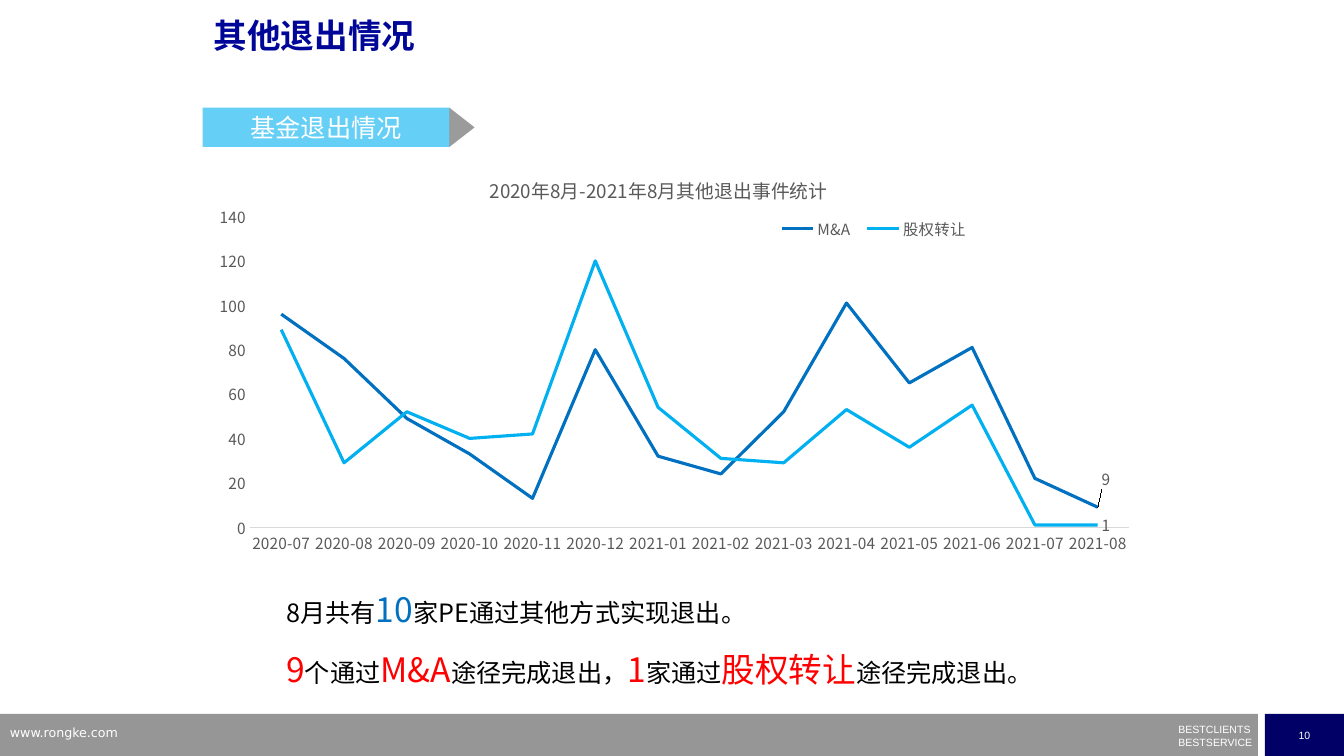
from lxml import etree
from pptx import Presentation
from pptx import util as u
from pptx.chart.data import CategoryChartData
from pptx.dml.color import RGBColor
from pptx.enum import chart as ch, shapes, text
from pptx.oxml import parse_xml
from pptx.oxml.ns import nsdecls, qn

Pt = u.Pt
HUE = {"navy": "000066", "title": "000798", "blue": "0070C0", "sky": "00B0F0",
       "red": "FF0000", "black": "000000", "white": "FFFFFF", "grey": "969696",
       "dark": "595959", "pale": "D9D9D9"}
SANS = "Noto Sans CJK SC"
LEFT = text.PP_ALIGN.LEFT
MID = text.PP_ALIGN.CENTER

MONTHS = [f"2020-{m:02}" for m in range(7, 13)] + [f"2021-{m:02}" for m in range(1, 9)]
DEALS = {
    "M&A": ("blue", [96, 76, 49, 33, 13, 80, 32, 24, 52, 101, 65, 81, 22, 9]),
    "股权转让": ("sky", [89, 29, 52, 40, 42, 120, 54, 31, 29, 53, 36, 55, 1, 1]),
}


def rgb(hue):
    return RGBColor.from_string(HUE[hue])


def layout(**spots):
    """Build a manual chart layout from settings such as x, y, w, h."""
    tags = "".join(f'<c:{k} val="{v}"/>' for k, v in spots.items())
    return parse_xml(f'<c:layout {nsdecls("c")}><c:manualLayout>{tags}'
                     '</c:manualLayout></c:layout>')


def place(part, after, **spots):
    """Swap in a manual layout right after the named child, or first."""
    for old in part.findall(qn("c:layout")):
        part.remove(old)
    new = layout(**spots)
    if after:
        part.find(qn(after)).addnext(new)
    else:
        part.insert(0, new)


class Deck:
    def __init__(self):
        self.prs = Presentation()
        self.prs.slide_width, self.prs.slide_height = Pt(960), Pt(540)
        self.slide = self.prs.slides.add_slide(self.prs.slide_layouts[5])

    def font(self, font, size, hue, name=SANS, bold=False):
        font.size, font.bold, font.name = Pt(size), bold, name
        font.color.rgb = rgb(hue)
        east = etree.SubElement(font._rPr, qn("a:ea"))
        east.set("typeface", SANS)

    def fill(self, frame, lines, size, hue, name=SANS, align=LEFT, gap=None,
             bold=False):
        """Put in lines; a line is a string or a list of (words, size, hue)."""
        for i, line in enumerate(lines):
            para = frame.paragraphs[0] if i == 0 else frame.add_paragraph()
            para.alignment, para.line_spacing = align, gap
            if isinstance(line, str):
                para.text = line
                self.font(para.font, size, hue, name, bold)
                continue
            for words, big, tint in line:
                run = para.add_run()
                run.text = words
                self.font(run.font, big, tint, name)

    def title(self, words, box):
        head = self.slide.shapes.title
        head.left, head.top, head.width, head.height = map(Pt, box)
        frame = head.text_frame
        frame.auto_size = text.MSO_AUTO_SIZE.NONE
        frame.vertical_anchor = text.MSO_ANCHOR.TOP
        self.fill(frame, [words], 24, "title", "Arial", gap=0.9, bold=True)

    def shape(self, kind, box, hue, alpha=None, home=None):
        item = (home or self.slide).shapes.add_shape(kind, *map(Pt, box))
        item.shadow.inherit = False
        item.fill.solid()
        item.fill.fore_color.rgb = rgb(hue)
        item.line.fill.background()
        if alpha:
            tint = item.fill._xPr.find(qn("a:solidFill"))[0]
            etree.SubElement(tint, qn("a:alpha")).set("val", str(alpha * 1000))
        item.text_frame.vertical_anchor = text.MSO_ANCHOR.MIDDLE
        return item

    def note(self, lines, box, size, hue, inset=True, **style):
        frame = self.slide.shapes.add_textbox(*map(Pt, box)).text_frame
        frame.word_wrap = True
        if not inset:
            frame.margin_left = frame.margin_right = 0
            frame.margin_top = frame.margin_bottom = 0
        self.fill(frame, lines, size, hue, **style)
        return frame

    def chart(self, name, box):
        data = CategoryChartData()
        data.categories = MONTHS
        for label, (hue, vals) in DEALS.items():
            data.add_series(label, vals)
        chart = self.slide.shapes.add_chart(
            ch.XL_CHART_TYPE.LINE, *map(Pt, box), data).chart
        self.font(chart.font, 11, "dark")
        head = chart.chart_title
        self.fill(head.text_frame, [name], 13.4, "dark", align=MID)
        place(head._element, "c:tx", xMode="edge", yMode="edge", x=0.3, y=0.05)
        area = chart._chartSpace.chart.plotArea
        place(area, None, layoutTarget="inner", xMode="edge", yMode="edge",
              x=0.05, y=0.16, w=0.93, h=0.75)
        self.axes(chart)
        chart.has_legend = True
        key = chart.legend
        key.position = ch.XL_LEGEND_POSITION.BOTTOM
        key.include_in_layout = False
        self.font(key.font, 11, "dark")
        place(key._element, "c:legendPos", xMode="edge", yMode="edge",
              x=0.6, y=0.16, w=0.22, h=0.06)
        for line in chart.plots[0].series:
            self.line(line, DEALS[line.name][0])
        last = chart.plots[0].series[0]._element.find(".//" + qn("c:dLbl"))
        place(last, "c:idx", x=0, y=-0.07)

    def axes(self, chart):
        cat, val = chart.category_axis, chart.value_axis
        for axis in (cat, val):
            axis.has_major_gridlines = False
            axis.major_tick_mark = axis.minor_tick_mark = ch.XL_TICK_MARK.NONE
            self.font(axis.tick_labels.font, 11, "dark")
        cat.format.line.color.rgb = rgb("pale")
        cat.format.line.width = Pt(0.75)
        val.format.line.fill.background()
        val.minimum_scale, val.maximum_scale, val.major_unit = 0, 140, 20

    def line(self, line, hue):
        line.smooth = False
        line.format.line.color.rgb = rgb(hue)
        line.format.line.width = Pt(2.25)
        line.marker.style = ch.XL_MARKER_STYLE.NONE
        line.data_labels.show_value = False
        label = line.points[len(MONTHS) - 1].data_label
        self.font(label.font, 11, "dark")
        label.position = ch.XL_LABEL_POSITION.RIGHT

    def banner(self, words):
        group = self.slide.shapes.add_group_shape()
        bar = self.shape(shapes.MSO_SHAPE.RECTANGLE, (144.7, 77, 176.5, 28),
                         "sky", 60, group)
        self.fill(bar.text_frame, [words], 18, "white", align=MID)
        tip = self.shape(shapes.MSO_SHAPE.ISOSCELES_TRIANGLE, (316, 82, 28, 18),
                         "dark", 60, group)
        tip.rotation = 90

    def footer(self):
        rect = shapes.MSO_SHAPE.RECTANGLE
        self.shape(rect, (0, 510, 898.5, 30), "grey")
        page = self.shape(rect, (903.5, 510, 56.5, 30), "navy").text_frame
        page.word_wrap = False
        self.fill(page, ["10"], 7.5, "white", "Arial", MID)
        motto = self.note(["BESTCLIENTS", "BESTSERVICE"], (841.7, 520.5, 55, 14.4),
                          7.5, "white", False, name="Arial", gap=0.5)
        motto.paragraphs[1].space_before = Pt(4.3)
        self.note(["www.rongke.com"], (0, 514, 230, 19), 9, "white",
                  name="DejaVu Sans")


def main():
    deck = Deck()
    deck.footer()
    deck.title("其他退出情况", (145.5, 10, 648, 50.4))
    deck.note([
        [("8月共有", 18, "black"), ("10", 24, "blue"),
         ("家PE通过其他方式实现退出。", 18, "black")],
        [("9", 24, "red"), ("个通过", 18, "black"), ("M&A", 24, "red"),
         ("途径完成退出，", 18, "black"), ("1", 24, "red"),
         ("家通过", 18, "black"), ("股权转让", 24, "red"),
         ("途径完成退出。", 18, "black")],
    ], (204.5, 406, 578, 82), 18, "black", False,
        align=text.PP_ALIGN.JUSTIFY, gap=1.5)
    deck.banner("基金退出情况")
    deck.chart("2020年8月-2021年8月其他退出事件统计", (144.7, 107.3, 675.4, 296))
    deck.prs.save("out.pptx")


if __name__ == "__main__":
    main()
